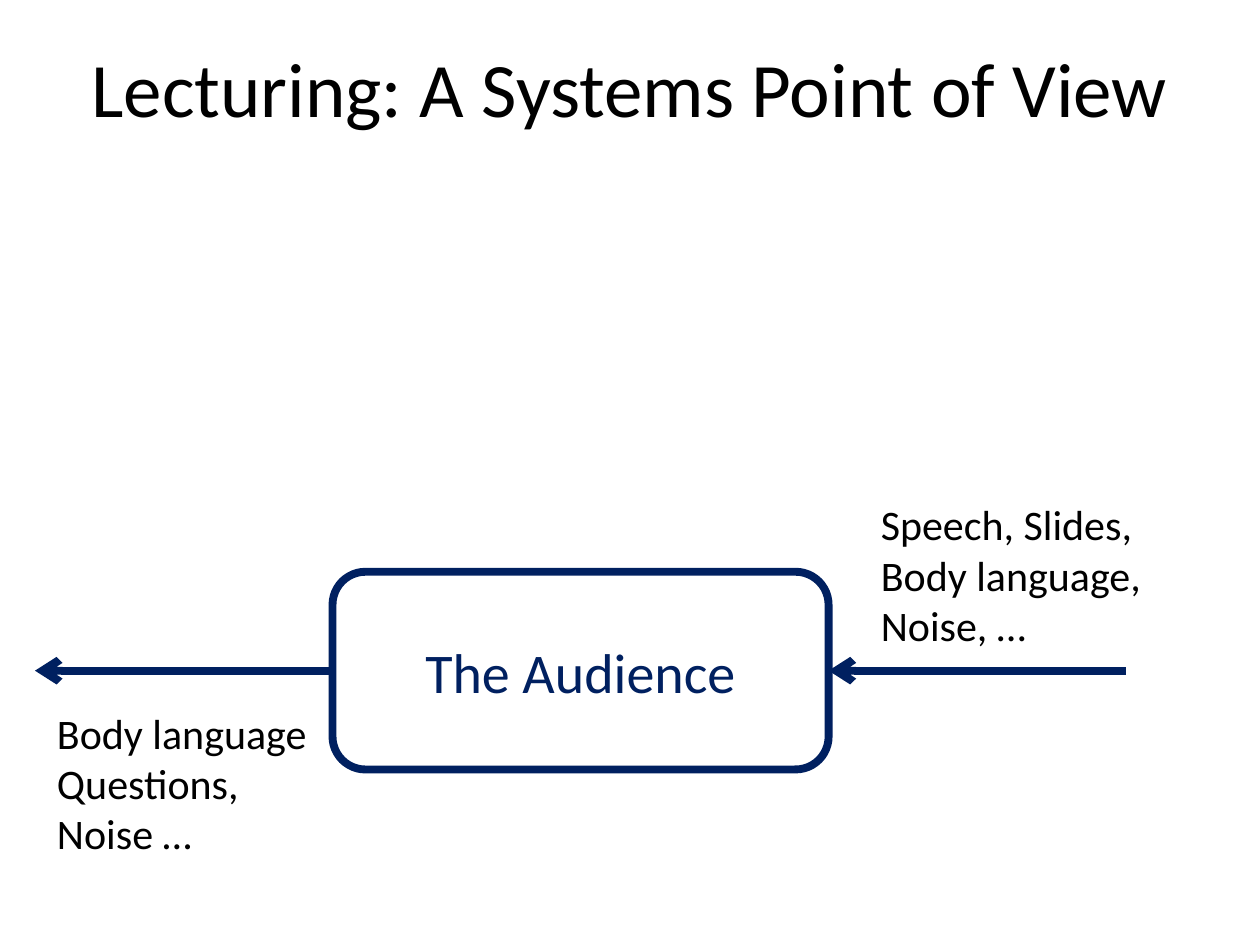
"""Build the slide that shows lecturing as a system around the audience."""
from lxml.etree import SubElement
from pptx import Presentation
from pptx.dml.color import RGBColor
from pptx.enum.shapes import MSO_CONNECTOR, MSO_SHAPE
from pptx.enum.text import MSO_ANCHOR, MSO_AUTO_SIZE, PP_ALIGN
from pptx.oxml.ns import qn
from pptx.util import Pt

COLORS = {"navy": "002060", "black": "000000"}
LINE_WIDTH = 4.5


def write_text(shape, text, size, color, alignment, frame_format):
    text_frame = shape.text_frame
    text_frame.text = text
    for name, value in frame_format.items():
        setattr(text_frame, name, value)
    for paragraph in text_frame.paragraphs:
        paragraph.alignment = alignment
        for run in paragraph.runs:
            for name, value in {"name": "Calibri", "size": Pt(size)}.items():
                setattr(run.font, name, value)
            run.font.color.rgb = RGBColor.from_string(COLORS[color])


def style_line(line):
    line.width = Pt(LINE_WIDTH)
    line.color.rgb = RGBColor.from_string(COLORS["navy"])


presentation = Presentation()
presentation.slide_width = Pt(720)
presentation.slide_height = Pt(540)
slide = presentation.slides.add_slide(presentation.slide_layouts[6])

centered = {"word_wrap": True, "vertical_anchor": MSO_ANCHOR.MIDDLE}
title = slide.shapes.add_textbox(Pt(36), Pt(4.5), Pt(648), Pt(90))
write_text(title, "Lecturing: A Systems Point of View", 44, "black", PP_ALIGN.CENTER, centered)

box_left, box_top, box_width, box_height = 190, 326.75, 283.5, 113
audience = slide.shapes.add_shape(
    MSO_SHAPE.ROUNDED_RECTANGLE, Pt(box_left), Pt(box_top), Pt(box_width), Pt(box_height)
)
audience.shadow.inherit = False
audience.fill.background()
style_line(audience.line)
write_text(audience, "The Audience", 32, "navy", PP_ALIGN.CENTER, centered)

arrow_length = 170
arrow_y = box_top + box_height / 2
for arrow_left in (box_left - arrow_length, box_left + box_width):
    arrow = slide.shapes.add_connector(
        MSO_CONNECTOR.STRAIGHT,
        Pt(arrow_left), Pt(arrow_y), Pt(arrow_left + arrow_length), Pt(arrow_y),
    )
    style_line(arrow.line)
    SubElement(arrow.line._get_or_add_ln(), qn("a:headEnd"), type="arrow")
    SubElement(arrow._element.spPr, qn("a:effectLst"))

labels = [
    ("Body language\vQuestions,\nNoise …", 25.5, 400.5, 158),
    ("Speech, Slides,\nBody language,\nNoise, …", 496.25, 281.5, 164),
]
label_format = {"word_wrap": False, "auto_size": MSO_AUTO_SIZE.SHAPE_TO_FIT_TEXT}
for text, left, top, width in labels:
    label = slide.shapes.add_textbox(Pt(left), Pt(top), Pt(width), Pt(94.5))
    write_text(label, text, 24, "black", PP_ALIGN.LEFT, label_format)

presentation.save("out.pptx")
